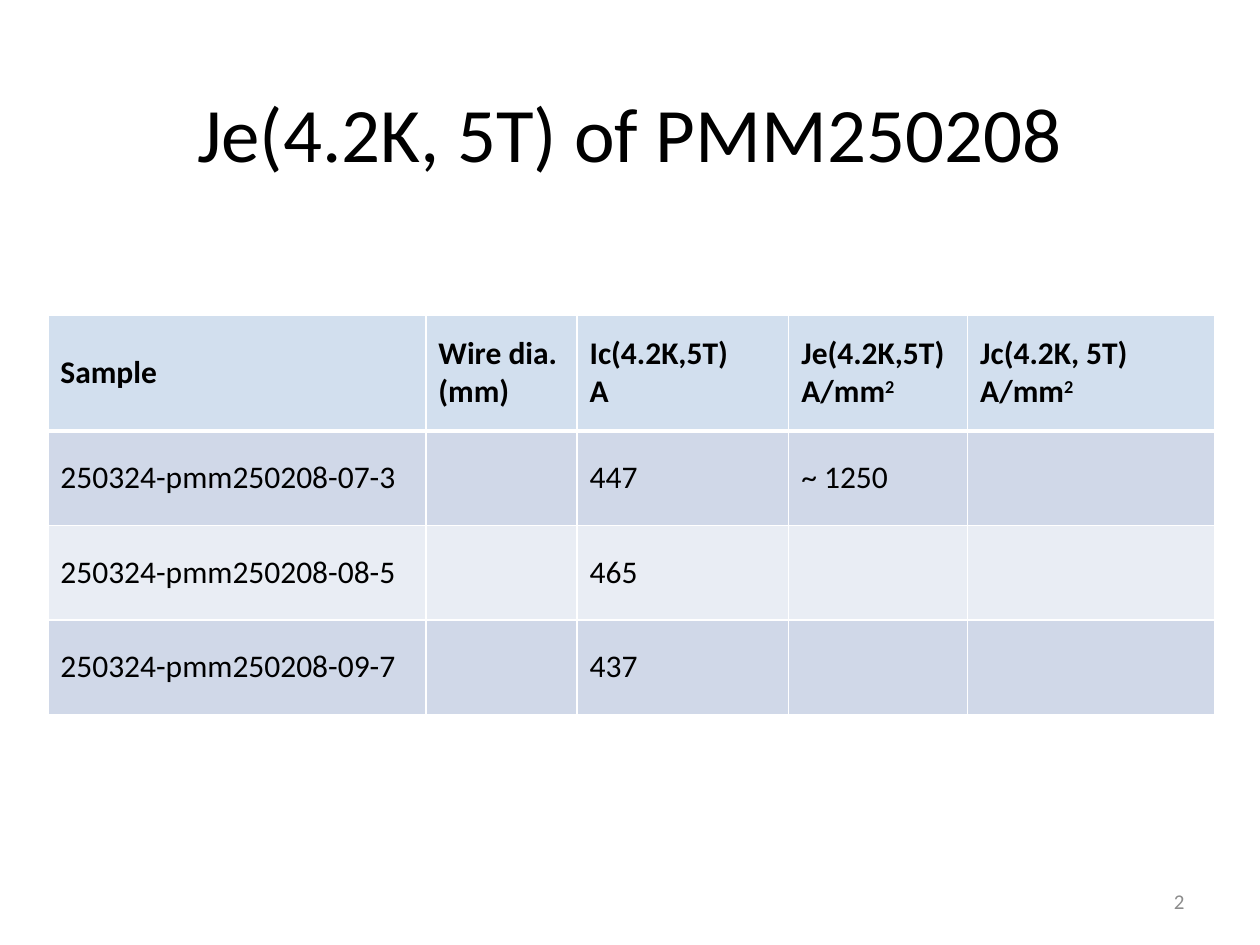
from dataclasses import dataclass

from lxml import etree
from pptx import Presentation
from pptx import util as u
from pptx.dml.color import RGBColor
from pptx.enum import text
from pptx.oxml import ns


@dataclass(frozen=True)
class Theme:
    font: str = "Calibri"
    ink: str = "000000"
    muted: str = "8C8C8C"
    header: str = "4F81BD"
    header_alpha: int = 25
    bands: tuple[str, str] = ("D0D8E8", "E9EDF4")
    rule: str = "FFFFFF"
    title_size: int = 44
    table_size: int = 18
    number_size: int = 12
    thin: float = 1
    thick: float = 3


@dataclass(frozen=True)
class Column:
    heading: str  # lines split by "\n"; "^" raises the rest of a line
    width: float
    values: tuple[str, ...]


THEME = Theme()
SLIDE_W, SLIDE_H = u.Inches(10), u.Inches(7.5)
HEADER_H, ROW_H = 0.92, 0.75
COLUMNS = (
    Column("Sample", 3, tuple(f"250324-pmm250208-{n}" for n in ("07-3", "08-5", "09-7"))),
    Column("Wire dia.\n(mm)", 1.2, ("", "", "")),
    Column("Ic(4.2K,5T)\nA", 1.68, ("447", "465", "437")),
    Column("Je(4.2K,5T)\nA/mm^2", 1.42, ("~ 1250", "", "")),
    Column("Jc(4.2K, 5T)\nA/mm^2", 1.96, ("", "", "")),
)


def place(shape, left: float, top: float, width: float, height: float) -> None:
    """Position a shape by shares of the slide's size."""
    box = {"left": left * SLIDE_W, "top": top * SLIDE_H,
           "width": width * SLIDE_W, "height": height * SLIDE_H}
    for name, value in box.items():
        setattr(shape, name, round(value))


def write(frame, content: str, size: int, color: str = THEME.ink,
          bold: bool = False, align=text.PP_ALIGN.LEFT) -> None:
    for index, line in enumerate(content.split("\n")):
        paragraph = frame.add_paragraph() if index else frame.paragraphs[0]
        paragraph.alignment = align
        for raised, part in enumerate(line.split("^")):
            run = paragraph.add_run()
            run.text = part
            for name, value in {"name": THEME.font, "size": u.Pt(size), "bold": bold}.items():
                setattr(run.font, name, value)
            run.font.color.rgb = RGBColor.from_string(color)
            if raised:
                run.font._element.set("baseline", "30000")


def draw_borders(cell, bottom: float) -> None:
    properties = cell._tc.get_or_add_tcPr()
    widths = {"lnL": THEME.thin, "lnR": THEME.thin, "lnT": THEME.thin, "lnB": bottom}
    for index, (side, width) in enumerate(widths.items()):
        line = etree.Element(ns.qn(f"a:{side}"), w=str(u.Pt(width)))
        fill = etree.SubElement(line, ns.qn("a:solidFill"))
        etree.SubElement(fill, ns.qn("a:srgbClr"), val=THEME.rule)
        properties.insert(index, line)


def fill_cell(cell, content: str, row: int) -> None:
    is_header = row == 0
    cell.vertical_anchor = text.MSO_ANCHOR.MIDDLE
    cell.fill.solid()
    cell.fill.fore_color.rgb = RGBColor.from_string(
        THEME.header if is_header else THEME.bands[(row - 1) % 2])
    if is_header:
        color = cell._tc.tcPr.find(".//" + ns.qn("a:srgbClr"))
        etree.SubElement(color, ns.qn("a:alpha"), val=str(THEME.header_alpha * 1000))
    draw_borders(cell, THEME.thick if is_header else THEME.thin)
    write(cell.text_frame, content, THEME.table_size, bold=is_header)


def add_results(slide) -> None:
    heights = [HEADER_H] + [ROW_H] * len(COLUMNS[0].values)
    total_width = sum(column.width for column in COLUMNS)
    table = slide.shapes.add_table(
        len(heights), len(COLUMNS), u.Inches(0.38), u.Inches(2.5),
        u.Inches(total_width), u.Inches(sum(heights))).table
    for row, height in enumerate(heights):
        table.rows[row].height = u.Inches(height)
    for index, column in enumerate(COLUMNS):
        table.columns[index].width = u.Inches(column.width)
        for row, content in enumerate((column.heading, *column.values)):
            fill_cell(table.cell(row, index), content, row)


def main() -> None:
    deck = Presentation()
    deck.slide_width, deck.slide_height = SLIDE_W, SLIDE_H
    slide = deck.slides.add_slide(deck.slide_layouts[5])

    title = slide.shapes.title
    place(title, 0.05, 0.056, 0.9, 0.167)
    title.text_frame.vertical_anchor = text.MSO_ANCHOR.MIDDLE
    write(title.text_frame, "Je(4.2K, 5T) of PMM250208", THEME.title_size,
          align=text.PP_ALIGN.CENTER)

    add_results(slide)

    page_number = slide.shapes.add_textbox(0, 0, 0, 0)
    place(page_number, 0.717, 0.927, 0.233, 0.053)
    page_number.text_frame.word_wrap = True
    page_number.text_frame.vertical_anchor = text.MSO_ANCHOR.MIDDLE
    write(page_number.text_frame, "2", THEME.number_size, THEME.muted,
          align=text.PP_ALIGN.RIGHT)

    deck.save("out.pptx")


if __name__ == "__main__":
    main()
